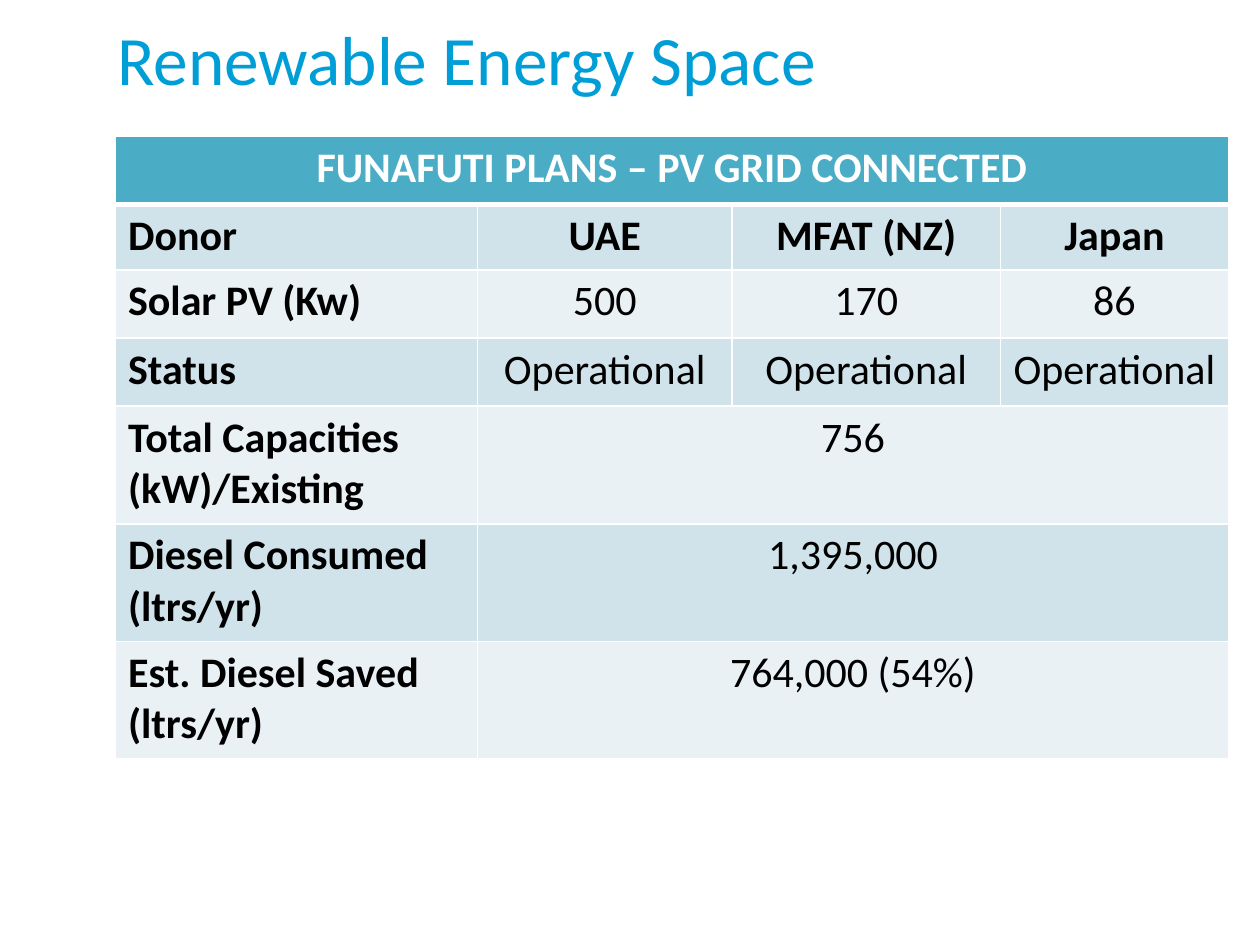
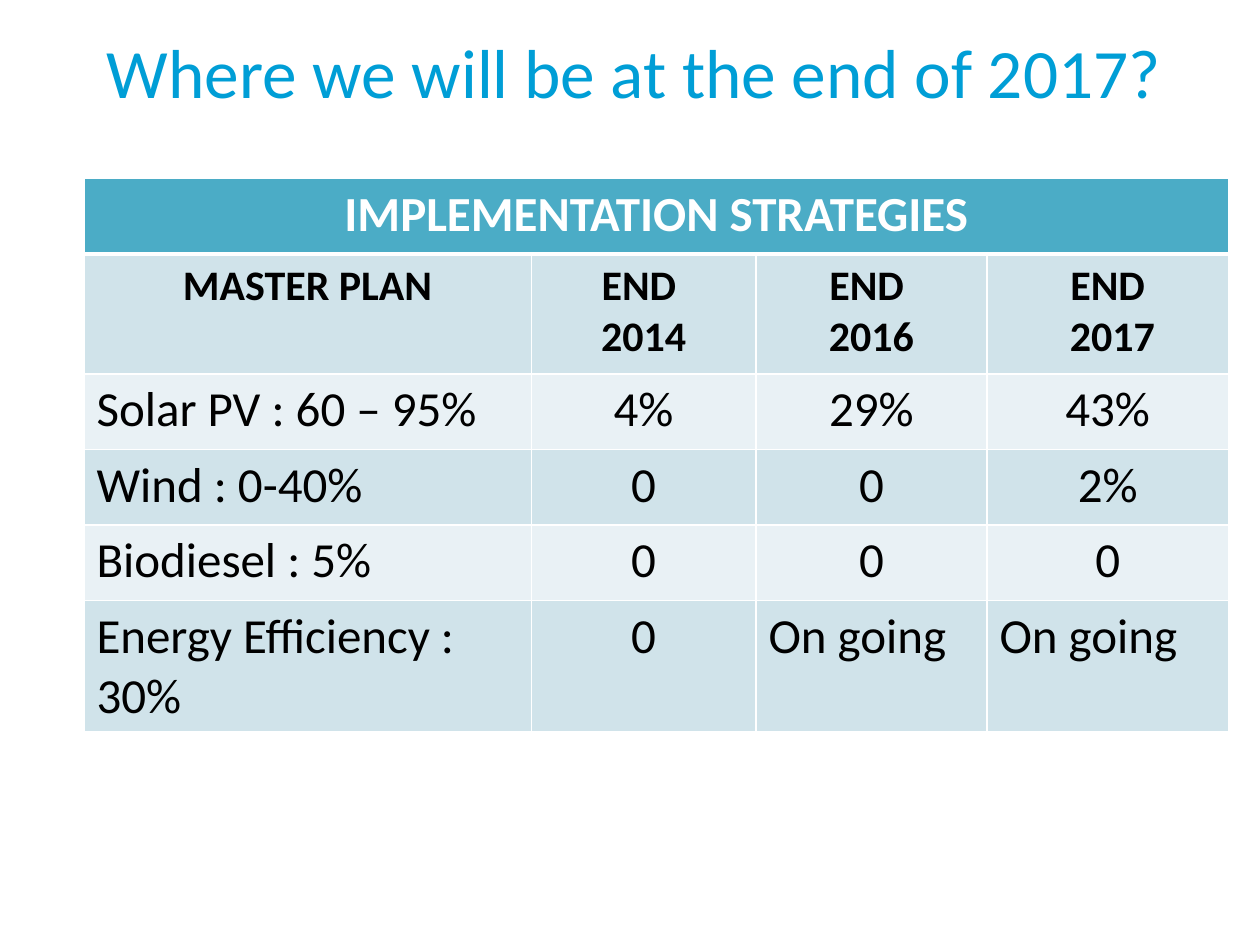
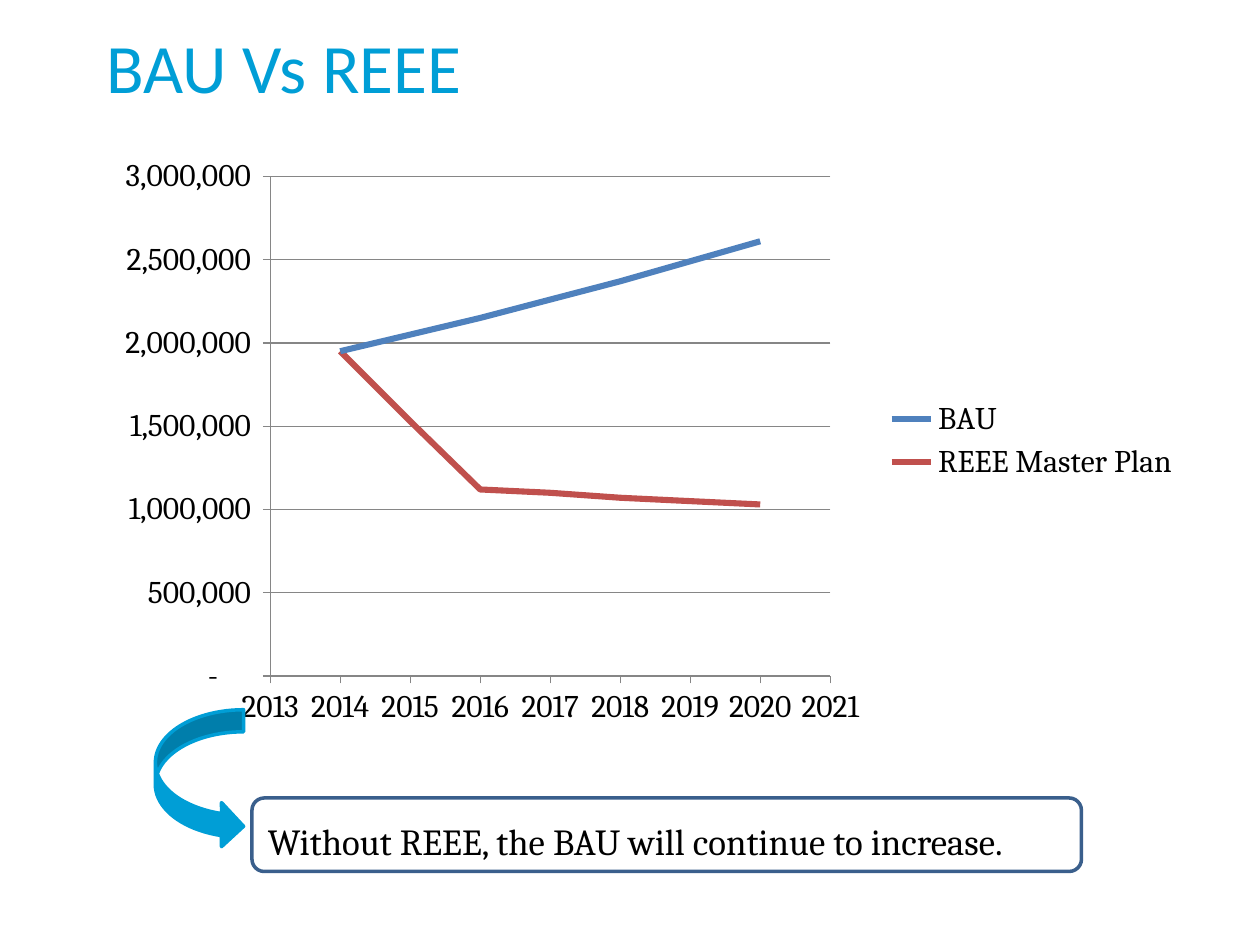
import dataclasses

import lxml.etree
import pptx
import pptx.chart.data
import pptx.dml.color
import pptx.enum.chart
import pptx.enum.shapes
import pptx.enum.text
import pptx.oxml.ns
import pptx.util

Shape = pptx.enum.shapes.MSO_SHAPE
Align = pptx.enum.text.PP_ALIGN
Anchor = pptx.enum.text.MSO_ANCHOR
Pt = pptx.util.Pt
qn = pptx.oxml.ns.qn

WIDE, HIGH = pptx.util.Inches(10), pptx.util.Inches(7.5)
COLS, ROWS = 120, 90


@dataclasses.dataclass(frozen=True)
class Theme:
    sans: str = "Calibri"
    serif: str = "Cambria"
    brand: str = "009ED6"
    ink: str = "000000"
    white: str = "FFFFFF"
    head: str = "4BACC6"
    bands: tuple = ("D0E3EA", "E9F1F5")
    frame: str = "3A5F8C"
    axis: str = "868686"
    lines: tuple = ("4F81BD", "C0504D")
    title: float = 39.6
    large: float = 28
    body: float = 24
    note: float = 21
    chart: float = 18


def rgb(code):
    return pptx.dml.color.RGBColor.from_string(code)


def place(left, top, width, height):
    """Turn grid columns and rows into slide lengths."""
    return (across(left), down(top), across(width), down(height))


def across(cols):
    return round(WIDE * cols / COLS)


def down(rows):
    return round(HIGH * rows / ROWS)


def paint(font, face, size, code, bold=False):
    font.name, font.size, font.bold = face, Pt(size), bold
    font.color.rgb = rgb(code)


class Deck:
    """Holds the theme and the slide being filled."""

    def __init__(self, theme):
        self.theme = theme
        self.file = pptx.Presentation()
        self.file.slide_width, self.file.slide_height = WIDE, HIGH
        self.slide = None

    def start(self, title, left, height):
        """Add a slide with its title line."""
        self.slide = self.file.slides.add_slide(self.file.slide_layouts[6])
        box = self.slide.shapes.add_textbox(*place(left, 2, 106, height))
        frame = box.text_frame
        frame.word_wrap = True
        frame.vertical_anchor = Anchor.MIDDLE
        self.text(frame, title, self.theme.sans, self.theme.title, self.theme.brand)

    def text(self, frame, words, face, size, code, bold=False, align=Align.LEFT):
        """Fill a frame with one paragraph per line of words."""
        for i, line in enumerate(words.split("\n")):
            para = frame.add_paragraph() if i else frame.paragraphs[0]
            para.alignment = align
            run = para.add_run()
            run.text = line
            paint(run.font, face, size, code, bold)

    def edge(self, cell, top=1, base=1):
        """Draw white borders, with top and base widths in points."""
        props = cell._tc.get_or_add_tcPr()
        sides = (("lnL", 1), ("lnR", 1), ("lnT", top), ("lnB", base))
        for i, (side, width) in enumerate(sides):
            line = lxml.etree.Element(qn("a:" + side), w=str(Pt(width)))
            fill = lxml.etree.SubElement(line, qn("a:solidFill"))
            lxml.etree.SubElement(fill, qn("a:srgbClr"), val=self.theme.white)
            props.insert(i, line)

    def table(self, left, top, cols, rows, cells, style):
        """Fill a table; a short row spans its last cell to the right edge.

        style(row, col) gives the size, boldness and alignment of a cell.
        """
        theme = self.theme
        spot = place(left, top, sum(cols), sum(rows))
        grid = self.slide.shapes.add_table(len(rows), len(cols), *spot).table
        for col, width in zip(grid.columns, cols):
            col.width = across(width)
        for row, height in zip(grid.rows, rows):
            row.height = down(height)
        for r, texts in enumerate(cells):
            back = theme.bands[(r - 1) % 2] if r else theme.head
            for c in range(len(cols)):
                cell = grid.cell(r, c)
                cell.fill.solid()
                cell.fill.fore_color.rgb = rgb(back)
                self.edge(cell, 3 if r == 1 else 1, 1 if r else 3)
            last = len(texts) - 1
            if len(texts) < len(cols):
                grid.cell(r, last).merge(grid.cell(r, len(cols) - 1))
            for c, words in enumerate(texts):
                size, bold, align = style(r, c)
                self.text(grid.cell(r, c).text_frame, words, theme.sans, size,
                          theme.ink if r else theme.white, bold, align)

    def shape(self, kind, spot, line, fill=None):
        item = self.slide.shapes.add_shape(kind, *place(*spot))
        item.shadow.inherit = False
        item.line.color.rgb, item.line.width = rgb(line), Pt(2)
        if fill:
            item.fill.solid()
            item.fill.fore_color.rgb = rgb(fill)
        else:
            item.fill.background()
        return item

    def note(self, spot, words):
        theme = self.theme
        frame = self.shape(Shape.ROUNDED_RECTANGLE, spot, theme.frame).text_frame
        frame.word_wrap = True
        frame.vertical_anchor = Anchor.MIDDLE
        frame.margin_top, frame.margin_bottom = down(1.7), down(0.6)
        self.text(frame, words, theme.serif, theme.note, theme.ink)

    def chart(self, spot, years, series, plot):
        """Draw lines over years; plot is the inner area as shares of the chart."""
        theme, enum = self.theme, pptx.enum.chart
        data = pptx.chart.data.XyChartData()
        for name, points in series.items():
            line = data.add_series(name)
            for year, point in zip(years, points):
                line.add_data_point(year, point)
        kind = enum.XL_CHART_TYPE.XY_SCATTER_LINES_NO_MARKERS
        chart = self.slide.shapes.add_chart(kind, *place(*spot), data).chart
        paint(chart.font, theme.serif, theme.chart, theme.ink)
        chart.has_title = False
        chart.has_legend = True
        chart.legend.position = enum.XL_LEGEND_POSITION.RIGHT
        chart.legend.include_in_layout = False
        chart.plots[0].vary_by_categories = False
        for line, code in zip(chart.plots[0].series, theme.lines):
            line.smooth = False
            line.marker.style = enum.XL_MARKER_STYLE.NONE
            line.format.line.color.rgb = rgb(code)
            line.format.line.width = Pt(3.5)
        money = '_(* #,##0_);_(* (#,##0);_(* "-"??_);_(@_)'
        scales = ((chart.category_axis, years[0] - 1, years[-1] + 1, 1, "General"),
                  (chart.value_axis, 0, 3_000_000, 500_000, money))
        for axis, low, high, step, form in scales:
            axis.minimum_scale, axis.maximum_scale = low, high
            axis.major_unit = step
            axis.major_tick_mark = enum.XL_TICK_MARK.OUTSIDE
            axis.minor_tick_mark = enum.XL_TICK_MARK.NONE
            axis.tick_labels.number_format = form
            axis.tick_labels.number_format_is_linked = False
            axis.format.line.color.rgb = rgb(theme.axis)
        chart.category_axis.has_major_gridlines = False
        chart.value_axis.has_major_gridlines = True
        chart.value_axis.major_gridlines.format.line.color.rgb = rgb(theme.axis)
        self.fit(chart, plot)

    def fit(self, chart, plot):
        """Fix the inner plot area of a chart."""
        area = chart._chartSpace.chart.plotArea
        for old in area.findall(qn("c:layout")):
            area.remove(old)
        layout = lxml.etree.Element(qn("c:layout"))
        area.insert(0, layout)
        hold = lxml.etree.SubElement(layout, qn("c:manualLayout"))
        parts = [("layoutTarget", "inner"), ("xMode", "edge"), ("yMode", "edge")]
        for tag, val in parts + list(zip("xywh", plot)):
            lxml.etree.SubElement(hold, qn("c:" + tag), val=str(val))


def plans(deck):
    deck.start("Renewable Energy Space", 10, 7)
    cells = [
        ["FUNAFUTI PLANS – PV GRID CONNECTED"],
        ["Donor", "UAE", "MFAT (NZ)", "Japan"],
        ["Solar PV (Kw)", "500", "170", "86"],
        ["Status"] + ["Operational"] * 3,
        ["Total Capacities (kW)/Existing", "756"],
        ["Diesel Consumed (ltrs/yr)", "1,395,000"],
        ["Est. Diesel Saved (ltrs/yr)", "764,000 (54%)"],
    ]

    def style(r, c):
        align = Align.LEFT if r and c == 0 else Align.CENTER
        return deck.theme.body, r < 2 or c == 0, align

    deck.table(11, 13, [34.5, 24.2, 25.6, 21.7],
               [6.5, 6.2, 6.5, 6.5] + [11.2] * 3, cells, style)


def goals(deck):
    deck.start("Where we will be at the end of 2017?", 9, 9.5)
    cells = [
        ["IMPLEMENTATION STRATEGIES"],
        ["MASTER PLAN", "END \n2014", "END \n2016", "END\n 2017"],
        ["Solar PV : 60 – 95%", "4%", "29%", "43%"],
        ["Wind : 0-40%", "0", "0", "2%"],
        ["Biodiesel : 5%", "0", "0", "0"],
        ["Energy Efficiency : 30%", "0", "On going", "On going"],
    ]

    def style(r, c):
        left = r > 1 and (c == 0 or cells[r][c] == "On going")
        size = deck.theme.body if r == 1 else deck.theme.large
        return size, r < 2, Align.LEFT if left else Align.CENTER

    deck.table(8, 17, [42.6, 21.4, 22, 23],
               [7.2, 11.4] + [7.2] * 3 + [12.5], cells, style)


def trends(deck):
    deck.start("BAU Vs REEE", 9, 8.5)
    series = {
        "BAU": [1950000, 2050000, 2150000, 2260000, 2370000, 2490000, 2610000],
        "REEE Master Plan": [1950000, 1530000, 1120000, 1100000, 1070000,
                             1050000, 1030000],
    }
    deck.chart((9, 14, 104.6, 56), range(2014, 2021), series,
               (0.16, 0.05, 0.51, 0.85))
    deck.note((24, 76, 79, 7), "Without REEE, the BAU will continue to increase.")
    brand = deck.theme.brand
    deck.shape(Shape.CURVED_RIGHT_ARROW, (14.8, 67.6, 8.4, 13.2), brand, brand)


def main():
    deck = Deck(Theme())
    for build in (plans, goals, trends):
        build(deck)
    deck.file.save("out.pptx")


if __name__ == "__main__":
    main()
